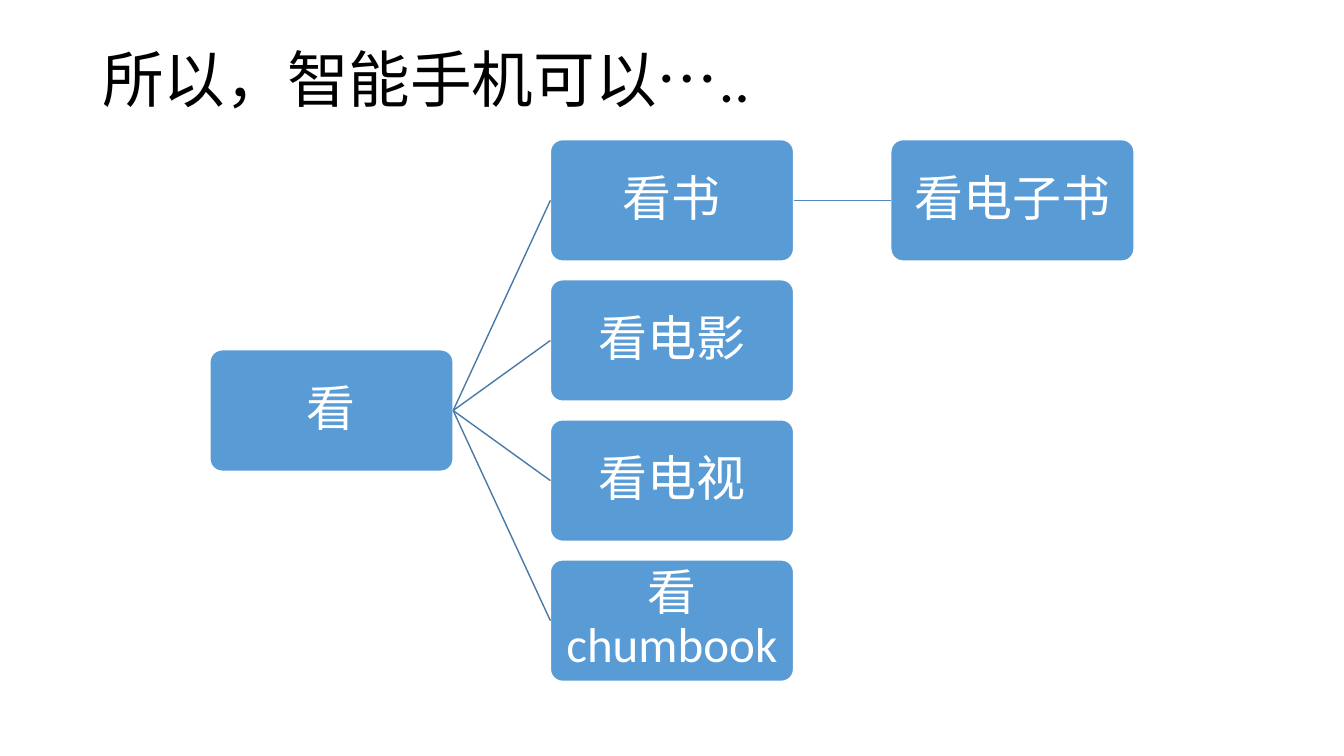
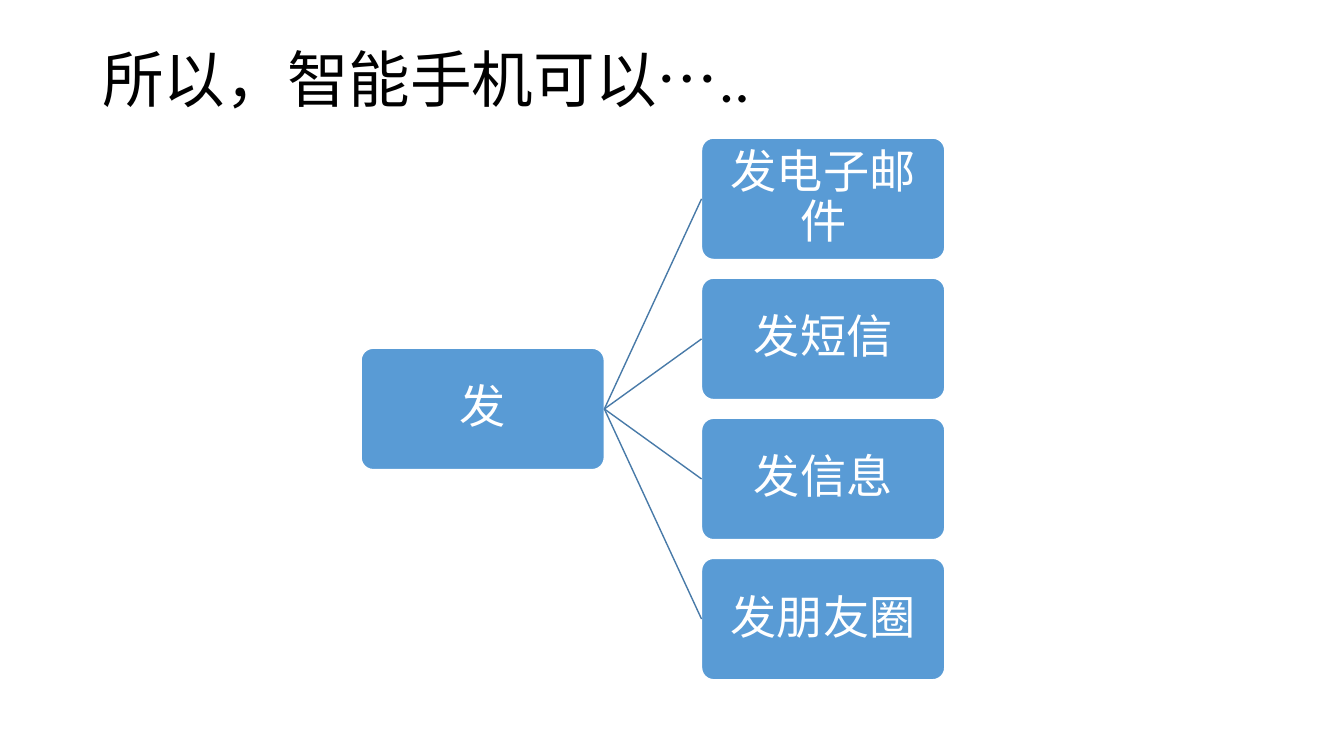
from pptx import Presentation, util as u
from pptx.dml.color import RGBColor
from pptx.enum import shapes, text
from pptx.oxml.ns import qn
from lxml import etree


def colour(value):
    """Turn a hex string into a colour."""
    return RGBColor.from_string(value)


class Deck:
    """Hold the shared style and the current slide."""

    FONT = "Calibri"
    TITLE_COLOUR = "000000"
    BOX_FILL = "599BD5"
    BOX_TEXT = "FFFFFF"
    BRANCH_LINE = "487AA8"
    LEAF_LINE = "528CBE"
    BOX_WIDTH, BOX_HEIGHT = 6.13, 3.06
    COLUMN_STEP, ROW_STEP = 8.58, 3.53

    def __init__(self):
        """Start a widescreen presentation."""
        self.presentation = Presentation()
        self.presentation.slide_width = u.Cm(33.87)
        self.presentation.slide_height = u.Cm(19.05)
        self.slide = None

    def add_slide(self, title):
        """Add a blank slide with a title."""
        layout = self.presentation.slide_layouts[6]
        self.slide = self.presentation.slides.add_slide(layout)
        shape = self.slide.shapes.add_textbox(u.Cm(2.33), u.Cm(0.25), u.Cm(29.21), u.Cm(3.68))
        self.add_text(shape, title, 44, self.TITLE_COLOUR, text.PP_ALIGN.LEFT, 0.25, 0.13)

    def add_text(self, shape, words, size, ink, align, side, edge):
        """Put one styled run in a shape."""
        frame = shape.text_frame
        frame.word_wrap = True
        frame.vertical_anchor = text.MSO_ANCHOR.MIDDLE
        frame.margin_left = frame.margin_right = u.Cm(side)
        frame.margin_top = frame.margin_bottom = u.Cm(edge)
        paragraph = frame.paragraphs[0]
        paragraph.alignment = align
        paragraph.line_spacing = 0.9
        run = paragraph.add_run()
        run.text = words
        run.font.name = self.FONT
        run.font.size = u.Pt(size)
        run.font.color.rgb = colour(ink)

    def add_box(self, words, left, top, size):
        """Add a rounded box with centred text."""
        shape = self.slide.shapes.add_shape(
            shapes.MSO_SHAPE.ROUNDED_RECTANGLE,
            u.Cm(left), u.Cm(top), u.Cm(self.BOX_WIDTH), u.Cm(self.BOX_HEIGHT))
        shape.adjustments[0] = 0.1
        shape.shadow.inherit = False
        shape.fill.solid()
        shape.fill.fore_color.rgb = colour(self.BOX_FILL)
        shape.line.color.rgb = colour("FFFFFF")
        shape.line.width = u.Pt(1)
        self.add_text(shape, words, size, self.BOX_TEXT, text.PP_ALIGN.CENTER, 0.1, 0.1)
        return shape

    def add_link(self, parent, child, ink):
        """Join the right side of one box to the left side of another."""
        connector = self.slide.shapes.add_connector(shapes.MSO_CONNECTOR.STRAIGHT, 0, 0, 0, 0)
        connector.begin_connect(parent, 3)
        connector.end_connect(child, 1)
        connector.line.color.rgb = colour(ink)
        connector.line.width = u.Pt(1)
        etree.SubElement(connector._element.spPr, qn("a:effectLst"))

    def add_tree(self, root, branches, left, top, size):
        """Draw a root with a column of branches and their leaves."""
        middle = top + (len(branches) - 1) / 2 * self.ROW_STEP
        root_box = self.add_box(root, left, middle, size)
        for row, (branch, *leaves) in enumerate(branches):
            row_top = top + row * self.ROW_STEP
            branch_box = self.add_box(branch, left + self.COLUMN_STEP, row_top, size)
            self.add_link(root_box, branch_box, self.BRANCH_LINE)
            for leaf in leaves:
                leaf_box = self.add_box(leaf, left + 2 * self.COLUMN_STEP, row_top, size)
                self.add_link(branch_box, leaf_box, self.LEAF_LINE)


def main():
    """Build and save both slides."""
    deck = Deck()
    title = "所以，智能手机可以….."

    deck.add_slide(title)
    watching = [("看书", "看电子书"), ("看电影",), ("看电视",), ("看chumbook",)]
    deck.add_tree("看", watching, 5.29, 3.52, 35)

    deck.add_slide(title)
    sending = [("发电子邮件",), ("发短信",), ("发信息",), ("发朋友圈",)]
    deck.add_tree("发", sending, 9.1, 3.48, 33)

    deck.presentation.save("out.pptx")


if __name__ == "__main__":
    main()
